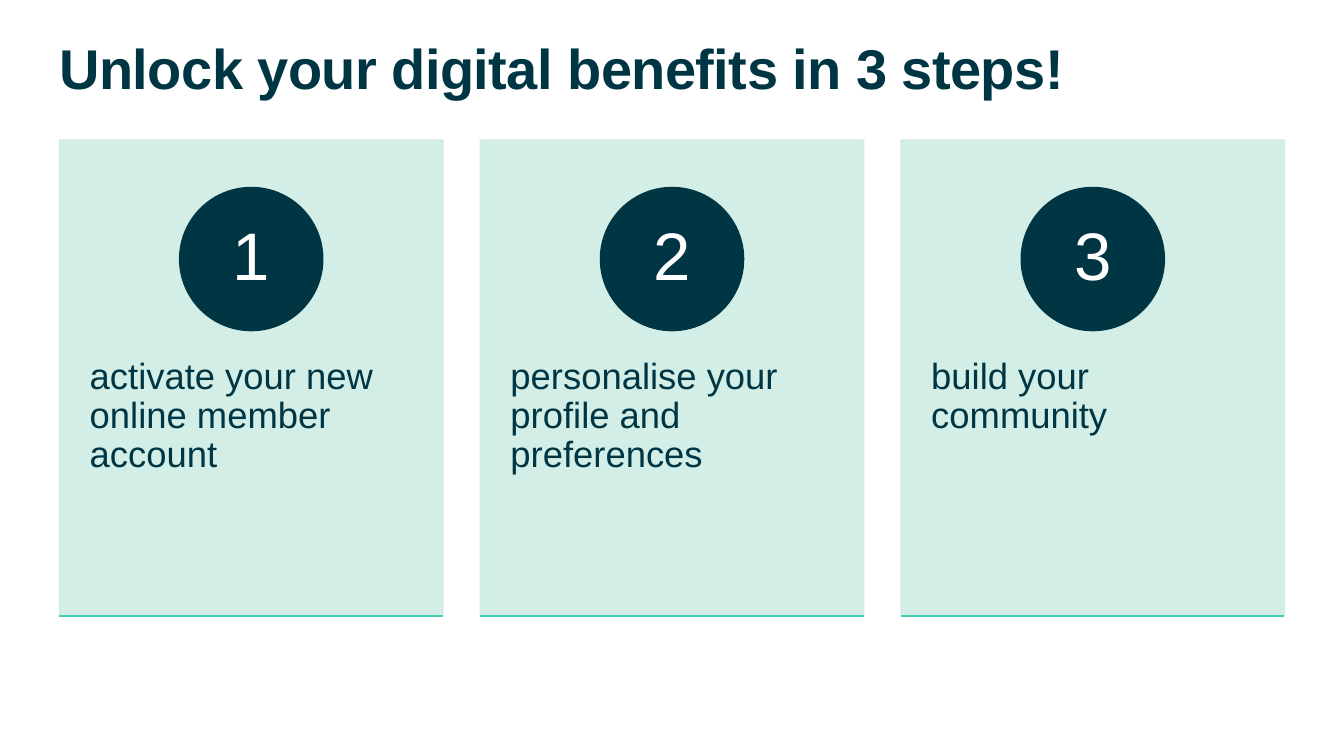
"""Build a slide with three numbered steps for unlocking digital benefits."""
from dataclasses import dataclass

from lxml import etree
from pptx import Presentation
from pptx import util as u
from pptx.dml.color import RGBColor
from pptx.enum import shapes, text
from pptx.oxml import ns
from pptx.shapes.base import BaseShape
from pptx.shapes.group import GroupShape
from pptx.slide import Slide
from pptx.text.text import TextFrame

COLORS = {"navy": "003643", "mint": "CFEDE5", "teal": "43CFB5", "white": "FFFFFF"}
FONT = "Arial"
SLIDE_WIDTH, SLIDE_HEIGHT = u.Inches(13.33), u.Inches(7.5)

MARGIN = u.Inches(0.59)
GUTTER = u.Inches(0.37)
CONTENT_WIDTH = SLIDE_WIDTH - 2 * MARGIN
CARD_WIDTH = (CONTENT_WIDTH - 2 * GUTTER) // 3
CARD_TOP, CARD_HEIGHT = u.Inches(1.39), u.Inches(4.72)
CIRCLE_TOP, CIRCLE_SIZE = u.Inches(1.86), u.Inches(1.42)
LABEL_TOP, LABEL_HEIGHT = u.Inches(3.19), u.Inches(2.83)


@dataclass(frozen=True)
class Step:
    number: int
    label: str

    @property
    def left(self) -> int:
        return MARGIN + (self.number - 1) * (CARD_WIDTH + GUTTER)


STEPS = [
    Step(1, "activate your new online member account"),
    Step(2, "personalise your profile and preferences"),
    Step(3, "build your community"),
]


def rgb(name: str) -> RGBColor:
    return RGBColor.from_string(COLORS[name])


def write(frame: TextFrame, content: str, size: int, color: str, bold: bool = False,
          align: text.PP_ALIGN = text.PP_ALIGN.LEFT,
          anchor: text.MSO_ANCHOR = text.MSO_ANCHOR.TOP,
          inset_x: float = 0, inset_y: float = 0) -> None:
    frame.word_wrap = True
    frame.auto_size = text.MSO_AUTO_SIZE.NONE
    frame.vertical_anchor = anchor
    frame.margin_left = frame.margin_right = u.Inches(inset_x)
    frame.margin_top = frame.margin_bottom = u.Inches(inset_y)
    frame.text = content
    paragraph = frame.paragraphs[0]
    paragraph.alignment = align
    paragraph.line_spacing = 0.9
    paragraph.space_before = u.Pt(0)
    font = paragraph.font
    font.name, font.size, font.bold = FONT, u.Pt(size), bold
    font.color.rgb = rgb(color)


def add_filled(group: GroupShape, kind: shapes.MSO_SHAPE, left: int, top: int,
               width: int, height: int, color: str) -> BaseShape:
    shape = group.shapes.add_shape(kind, left, top, width, height)
    shape.shadow.inherit = False
    shape.fill.solid()
    shape.fill.fore_color.rgb = rgb(color)
    shape.line.color.rgb = rgb(color)
    shape.line.width = u.Pt(1)
    return shape


def set_opacity(shape: BaseShape, percent: int) -> None:
    for color in shape.element.spPr.iter(ns.qn("a:srgbClr")):
        etree.SubElement(color, ns.qn("a:alpha"), val=str(percent * 1000))


def add_step(slide: Slide, step: Step) -> None:
    group = slide.shapes.add_group_shape()
    card = add_filled(group, shapes.MSO_SHAPE.RECTANGLE, step.left, CARD_TOP,
                      CARD_WIDTH, CARD_HEIGHT, "mint")
    set_opacity(card, 90)

    label = group.shapes.add_textbox(step.left, LABEL_TOP, CARD_WIDTH, LABEL_HEIGHT)
    write(label.text_frame, step.label, 26, "navy", inset_x=0.3, inset_y=0.36)

    circle = add_filled(group, shapes.MSO_SHAPE.OVAL,
                        step.left + (CARD_WIDTH - CIRCLE_SIZE) // 2, CIRCLE_TOP,
                        CIRCLE_SIZE, CIRCLE_SIZE, "navy")
    write(circle.text_frame, str(step.number), 48, "white",
          align=text.PP_ALIGN.CENTER, anchor=text.MSO_ANCHOR.MIDDLE)

    bottom = CARD_TOP + CARD_HEIGHT
    rule = group.shapes.add_connector(shapes.MSO_CONNECTOR.STRAIGHT, step.left, bottom,
                                      step.left + CARD_WIDTH, bottom)
    rule.line.color.rgb = rgb("teal")
    rule.line.width = u.Pt(1)
    etree.SubElement(rule.element.spPr, ns.qn("a:effectLst"))


def add_title(slide: Slide, content: str) -> None:
    title = slide.shapes.title
    title.left, title.top = MARGIN, u.Inches(0.41)
    title.width, title.height = CONTENT_WIDTH, u.Inches(0.79)
    write(title.text_frame, content, 40, "navy", bold=True)
    run = title.text_frame.paragraphs[0].runs[0]
    run.font._element.set("spc", "-40")


def main() -> None:
    presentation = Presentation()
    presentation.slide_width, presentation.slide_height = SLIDE_WIDTH, SLIDE_HEIGHT
    slide = presentation.slides.add_slide(presentation.slide_layouts[5])
    add_title(slide, "Unlock your digital benefits in 3 steps!")
    for step in STEPS:
        add_step(slide, step)
    presentation.save("out.pptx")


if __name__ == "__main__":
    main()
